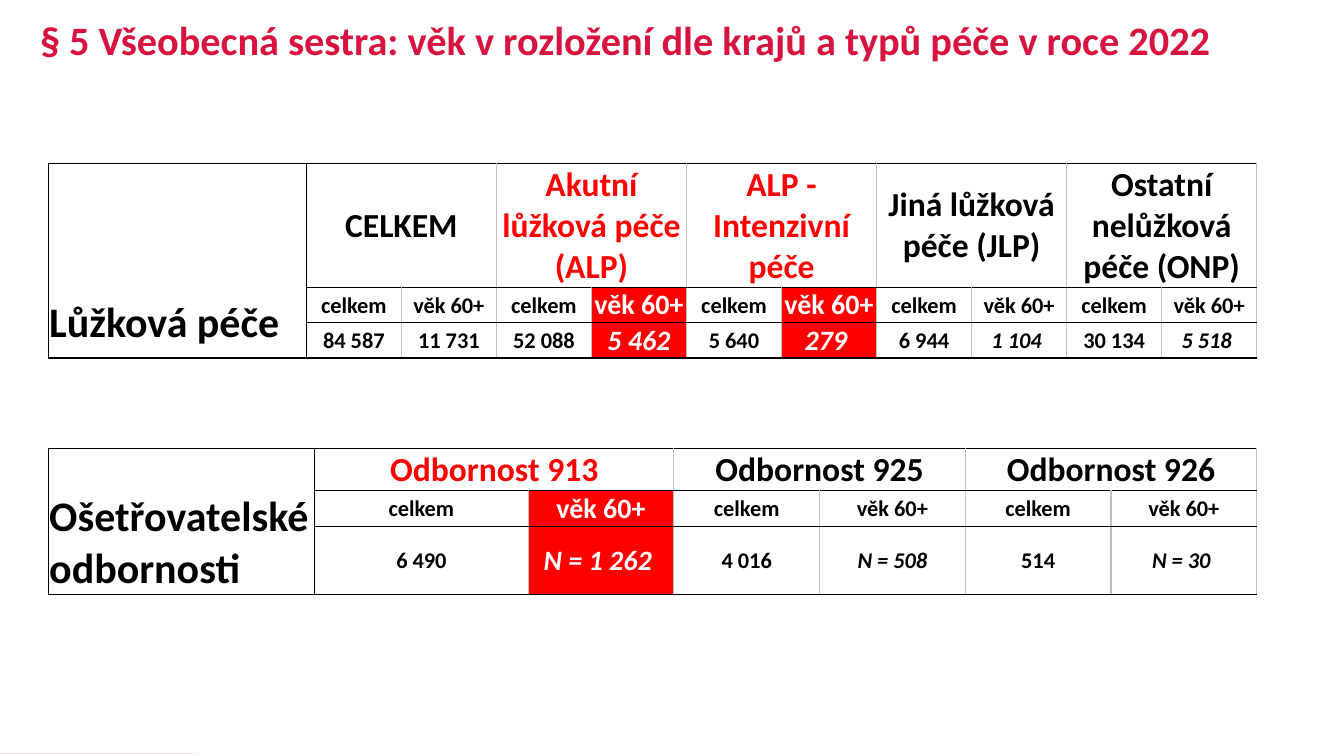
from dataclasses import dataclass

from lxml.etree import SubElement
from pptx import Presentation
from pptx.dml.color import RGBColor
from pptx.enum.text import MSO_ANCHOR as Anchor, PP_ALIGN as Align
from pptx.oxml.ns import qn
from pptx.util import Cm, Pt

BLACK, WHITE, RED, GREY = "000000", "FFFFFF", "FF0000", "BFBFBF"
CRIMSON, BLUE = "D71440", "2E5980"
CURVE_STEPS = 40


@dataclass
class CareGroup:
    heading: str
    total: str
    aged: str
    highlight: bool = False
    italic: bool = True


def color(value):
    return RGBColor.from_string(value)


def write(frame, text, size=16, tint=BLACK, italic=False, align=Align.CENTER,
          spacing=None, font="Calibri"):
    frame.word_wrap = True
    paragraph = frame.paragraphs[0]
    paragraph.alignment = align
    if spacing:
        paragraph.line_spacing = spacing
    run = paragraph.add_run()
    run.text = text
    run.font.name, run.font.size = font, Pt(size)
    run.font.bold, run.font.italic = True, italic
    run.font.color.rgb = color(tint)


def bezier(start, first, second, end):
    """Points along a cubic curve."""
    for step in range(CURVE_STEPS + 1):
        t = step / CURVE_STEPS
        yield tuple((1 - t) ** 3 * a + 3 * (1 - t) ** 2 * t * b
                    + 3 * (1 - t) * t ** 2 * c + t ** 3 * d
                    for a, b, c, d in zip(start, first, second, end))


class CareSlide:
    table_left, table_width = 1.22, 30.45

    def __init__(self, presentation):
        self.slide = presentation.slides.add_slide(presentation.slide_layouts[6])

    def corner(self, curve, tip, fill):
        points = list(bezier(*curve)) + [tip]
        builder = self.slide.shapes.build_freeform(*points[0], scale=Cm(1))
        builder.add_line_segments(points[1:], close=True)
        shape = builder.convert_to_shape()
        shape.fill.solid()
        shape.fill.fore_color.rgb = color(fill)
        shape.line.fill.background()
        # Soft shadow along the curved edge
        shape.shadow.inherit = False
        effects = shape._element.spPr.find(qn("a:effectLst"))
        shadow = SubElement(effects, qn("a:outerShdw"), blurRad=str(Pt(4)),
                            dist=str(Pt(3)), dir=str(45 * 60000))
        tone = SubElement(shadow, qn("a:srgbClr"), val=BLACK)
        SubElement(tone, qn("a:alpha"), val="40000")

    def title(self, text):
        box = self.slide.shapes.add_textbox(Cm(0.76), Cm(0.33), Cm(31.6), Cm(1.5))
        box.text_frame.vertical_anchor = Anchor.MIDDLE
        write(box.text_frame, text, size=28.8, tint=CRIMSON,
              align=Align.LEFT, spacing=0.9)

    def cell(self, cell, text="", fill=None, anchor=Anchor.MIDDLE,
             left=GREY, right=GREY, top=BLACK, bottom=BLACK, **style):
        cell.margin_left = cell.margin_top = cell.margin_right = Cm(0.02)
        cell.margin_bottom = 0
        cell.vertical_anchor = anchor
        # Borders come before the fill
        properties = cell._tc.get_or_add_tcPr()
        for side, tint in zip("LRTB", (left, right, top, bottom)):
            line = SubElement(properties, qn(f"a:ln{side}"), w=str(Pt(1)))
            if tint:
                solid = SubElement(line, qn("a:solidFill"))
                SubElement(solid, qn("a:srgbClr"), val=tint)
            else:
                SubElement(line, qn("a:noFill"))
        if fill:
            cell.fill.solid()
            cell.fill.fore_color.rgb = color(fill)
        else:
            cell.fill.background()
        if text:
            write(cell.text_frame, text, **style)

    def table(self, label, groups, top, rows, label_width, first_width=None,
              label_anchor=Anchor.MIDDLE):
        count = 2 * len(groups)
        table = self.slide.shapes.add_table(
            3, count + 1, Cm(self.table_left), Cm(top),
            Cm(self.table_width), Cm(sum(rows))).table
        table.first_row = table.horz_banding = False
        rest = self.table_width - label_width
        first_width = first_width or rest / count
        widths = [first_width] + [(rest - first_width) / (count - 1)] * (count - 1)
        for column, width in zip(table.columns, [label_width] + widths):
            column.width = Cm(width)
        for row, height in zip(table.rows, rows):
            row.height = Cm(height)

        # Label column: an open cell on top, the label over two rows
        frame = dict(left=BLACK, right=BLACK)
        self.cell(table.cell(0, 0), bottom=None, **frame)
        self.cell(table.cell(1, 0), label, top=None, anchor=label_anchor,
                  size=30, align=Align.LEFT, **frame)
        self.cell(table.cell(2, 0), top=None, **frame)
        table.cell(1, 0).merge(table.cell(2, 0))

        # One pair of columns for each group
        for index, group in enumerate(groups):
            column = 1 + 2 * index
            edge = GREY if index else BLACK
            self.cell(table.cell(0, column), group.heading, left=edge, size=24,
                      tint=RED if group.highlight else BLACK)
            self.cell(table.cell(0, column + 1))
            table.cell(0, column).merge(table.cell(0, column + 1))
            aged_style = dict(fill=RED, size=20, tint=WHITE) if group.highlight else {}
            pairs = (("celkem", "věk 60+", False),
                     (group.total, group.aged, group.italic))
            for row, (total, aged, italic) in enumerate(pairs, 1):
                self.cell(table.cell(row, column), total, left=edge)
                self.cell(table.cell(row, column + 1), aged, italic=italic,
                          **aged_style)


def main():
    presentation = Presentation()
    presentation.slide_width, presentation.slide_height = Cm(33.87), Cm(19.05)
    page = CareSlide(presentation)

    # Corners and title
    page.corner([(5.41, 19.08), (-0.86, 18.9), (0.2, 19.28), (0, 16)],
                (-0.03, 19.08), CRIMSON)
    page.corner([(28.22, -0.03), (34.8, 0.18), (33.68, -0.25), (33.91, 3.61)],
                (33.91, -0.03), BLUE)
    page.title("§ 5 Všeobecná sestra: věk v rozložení dle krajů a typů péče v roce 2022")

    # Inpatient care
    page.table("Lůžková péče", [
        CareGroup("CELKEM", "84 587", "11 731", italic=False),
        CareGroup("Akutní lůžková péče (ALP)", "52 088", "5 462", highlight=True),
        CareGroup("ALP - Intenzivní péče", "5 640", "279 ", highlight=True),
        CareGroup("Jiná lůžková péče (JLP)", "6 944", "1 104 "),
        CareGroup("Ostatní nelůžková péče (ONP)", "30 134", "5 518 "),
    ], top=4.11, rows=(3.13, 0.89, 0.89), label_width=6.5)

    # Nursing specialties
    page.table("Ošetřovatelské odbornosti", [
        CareGroup("Odbornost 913", "6 490", "N = 1 262 ", highlight=True),
        CareGroup("Odbornost 925", "4 016", "N = 508"),
        CareGroup("Odbornost 926", "514", "N = 30 "),
    ], top=11.3, rows=(1.07, 0.89, 1.72), label_width=6.71, first_width=5.38,
        label_anchor=Anchor.BOTTOM)

    presentation.save("out.pptx")


if __name__ == "__main__":
    main()
